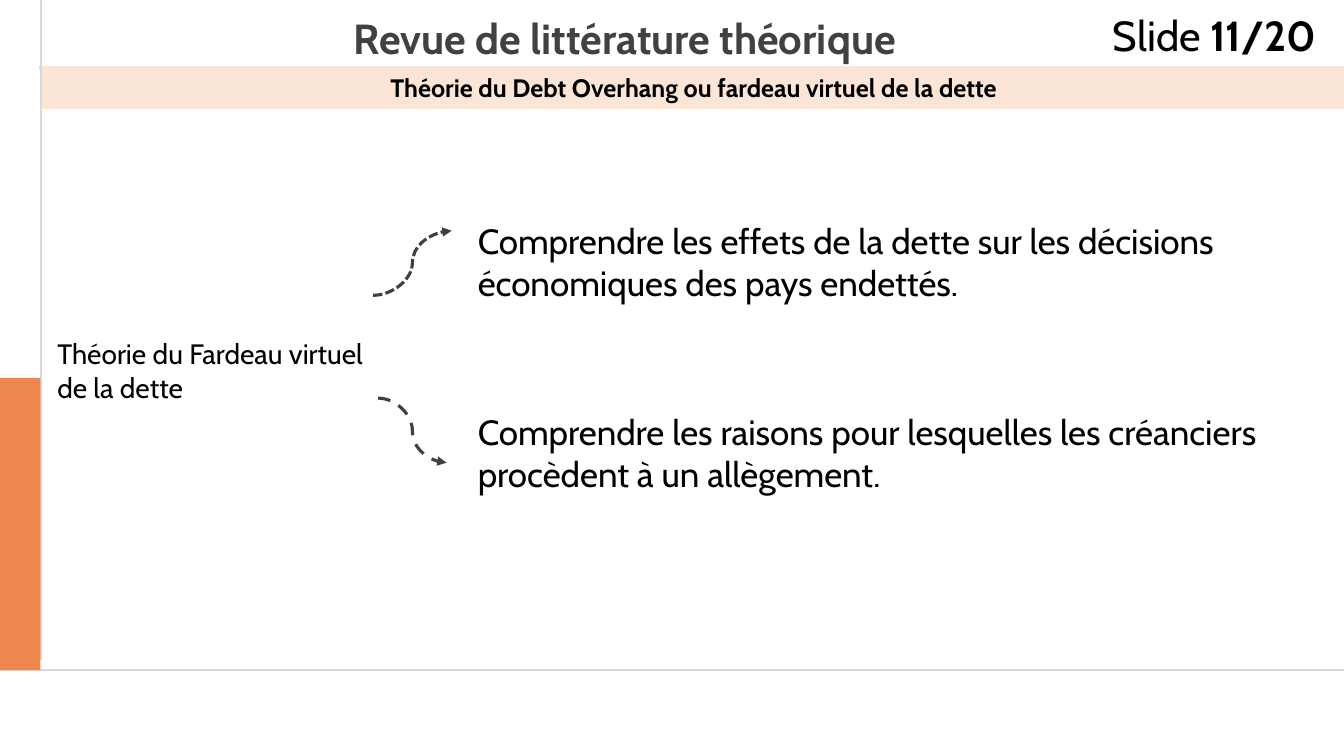
"""Build the slide on the debt overhang theory."""
from lxml.etree import SubElement
from pptx import Presentation
from pptx.dml.color import RGBColor
from pptx.enum.dml import MSO_LINE
from pptx.enum.shapes import MSO_CONNECTOR, MSO_SHAPE
from pptx.enum.text import MSO_ANCHOR, PP_ALIGN
from pptx.oxml.ns import qn
from pptx.util import Inches, Pt

FONT = "Cabin"
BLACK = RGBColor(0x00, 0x00, 0x00)
TITLE_GREY = RGBColor(0x41, 0x40, 0x42)
ARROW_GREY = RGBColor(0x40, 0x40, 0x40)
RULE_GREY = RGBColor(0xD9, 0xD9, 0xD9)
ORANGE = RGBColor(0xED, 0x87, 0x4E)
PEACH = RGBColor(0xFB, 0xE5, 0xD6)

WIDTH, HEIGHT = 13.33, 7.5
TITLE = "Revue de littérature théorique"
PAGE_LABEL, PAGE_NUMBER = "Slide ", "11/20"
SUBTITLE = "Théorie du Debt Overhang ou fardeau virtuel de la dette"
THEORY = "Théorie du Fardeau virtuel de la dette"
GOALS = [
    (2.13, 8.48, "Comprendre les effets de la dette sur les décisions économiques des pays endettés."),
    (4.02, 8.69, "Comprendre les raisons pour lesquelles les créanciers procèdent à un allègement."),
]
RULES = [(0.39, 0.67, WIDTH, 0.67), (0, 6.65, WIDTH, 6.65), (0.41, 6.55, 0.41, 0)]
ARROWS = [
    ((3.7, 2.93, 4.48, 2.29), MSO_LINE.SQUARE_DOT),
    ((3.75, 3.95, 4.43, 4.59), MSO_LINE.DASH),
]


def write(para, text, size=25, color=BLACK, bold=False, align=PP_ALIGN.LEFT):
    """Add formatted text to a paragraph."""
    para.alignment = align
    span = para.add_run()
    span.text = text
    span.font.name = FONT
    span.font.size = Pt(size)
    span.font.bold = bold
    span.font.color.rgb = color


def add_text(page, place, text, **style):
    """Add a wrapping text box and return its paragraph."""
    box = page.shapes.add_textbox(*map(Inches, place))
    box.text_frame.word_wrap = True
    para = box.text_frame.paragraphs[0]
    write(para, text, **style)
    return para


def add_bar(page, place, color):
    """Add a flat rectangle."""
    bar = page.shapes.add_shape(MSO_SHAPE.RECTANGLE, *map(Inches, place))
    bar.shadow.inherit = False
    bar.fill.solid()
    bar.fill.fore_color.rgb = color
    bar.line.fill.background()
    return bar


def add_line(page, ends, color, width, kind=MSO_CONNECTOR.STRAIGHT, dash=None):
    """Add a connector; a dashed one ends in an arrowhead."""
    line = page.shapes.add_connector(kind, *map(Inches, ends))
    line.line.color.rgb = color
    line.line.width = Pt(width)
    if dash:
        line.line.dash_style = dash
        SubElement(line.line._get_or_add_ln(), qn("a:tailEnd"), type="triangle")
    SubElement(line._element.spPr, qn("a:effectLst"))


def main():
    """Lay out the slide and save it."""
    deck = Presentation()
    deck.slide_width, deck.slide_height = Inches(WIDTH), Inches(HEIGHT)
    page = deck.slides.add_slide(deck.slide_layouts[6])

    for ends in RULES:
        add_line(page, ends, RULE_GREY, 1.5)
    add_bar(page, (0, 3.75, 0.4, 2.9), ORANGE)
    add_text(page, (3.41, 0.07, 6.67, 0.61), TITLE, size=30, color=TITLE_GREY, bold=True)
    for top, width, goal in GOALS:
        add_text(page, (4.64, top, width, 0.94), goal)

    band = add_bar(page, (0.43, 0.67, 12.9, 0.4), PEACH)
    band.line.color.rgb = PEACH
    band.line.width = Pt(1.5)
    band.text_frame.word_wrap = True
    band.text_frame.vertical_anchor = MSO_ANCHOR.TOP
    write(band.text_frame.paragraphs[0], SUBTITLE, size=18, bold=True, align=PP_ALIGN.CENTER)

    add_text(page, (0.47, 3.29, 3.23, 0.77), THEORY, size=20, align=PP_ALIGN.JUSTIFY)
    for ends, dash in ARROWS:
        add_line(page, ends, ARROW_GREY, 2.25, MSO_CONNECTOR.CURVE, dash)
    label = add_text(page, (10.94, 0.05, 2.39, 0.61), PAGE_LABEL, size=30)
    write(label, PAGE_NUMBER, size=30, bold=True)
    deck.save("out.pptx")


if __name__ == "__main__":
    main()
